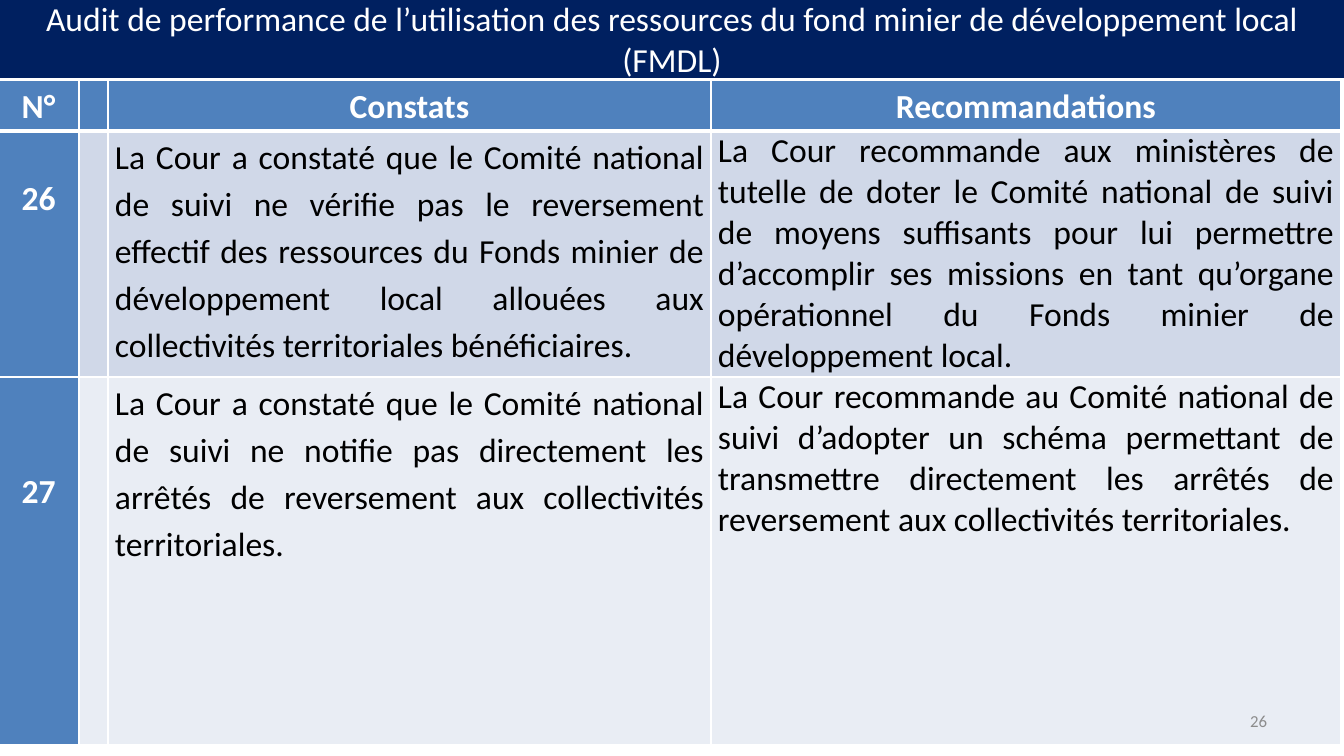
from lxml.etree import SubElement
from pptx import Presentation
from pptx.dml.color import RGBColor
from pptx.enum.shapes import MSO_SHAPE
from pptx.enum.text import MSO_ANCHOR, PP_ALIGN
from pptx.oxml.ns import qn
from pptx.util import Emu, Pt

COLORS = {
    "navy": "002060", "blue": "4F81BD", "band": "D0D8E8", "pale": "E9EDF4",
    "white": "FFFFFF", "black": "000000", "grey": "8C8C8C",
}
EMU_PER_PX = 914400 / 100.8


def px(length):
    return Emu(round(length * EMU_PER_PX))


def write(frame, text, size, color, align, bold=False, spacing=None):
    """Put one formatted run into the first paragraph of a text frame."""
    para = frame.paragraphs[0]
    para.alignment = align
    if spacing:
        para.line_spacing = spacing
    span = para.add_run()
    span.text = text
    span.font.name = "Calibri"
    span.font.size = Pt(size)
    span.font.bold = bold
    span.font.color.rgb = RGBColor.from_string(COLORS[color])


deck = Presentation()
deck.slide_width, deck.slide_height = px(1344), px(756)
page = deck.slides.add_slide(deck.slide_layouts[6])

# Title band
title = page.shapes.add_shape(MSO_SHAPE.RECTANGLE, 0, 0, px(1344), px(77))
title.shadow.inherit = False
title.fill.solid()
title.fill.fore_color.rgb = RGBColor.from_string(COLORS["navy"])
title.line.color.rgb = RGBColor.from_string(COLORS["navy"])
title.line.width = Pt(2)
title.text_frame.word_wrap = True
title.text_frame.vertical_anchor = MSO_ANCHOR.MIDDLE
write(
    title.text_frame,
    "Audit de performance de l’utilisation des ressources du fond minier "
    "de développement local (FMDL)",
    24, "white", PP_ALIGN.CENTER,
)

# Findings and recommendations
rows = [
    ("N°", "", "Constats", "Recommandations"),
    (
        "26", "",
        "La Cour a constaté que le Comité national de suivi ne vérifie pas le "
        "reversement effectif des ressources du Fonds minier de développement "
        "local allouées aux collectivités territoriales bénéficiaires.",
        "La Cour recommande aux ministères de tutelle de doter le Comité "
        "national de suivi de moyens suffisants pour lui permettre d’accomplir "
        "ses missions en tant qu’organe opérationnel du Fonds minier de "
        "développement local.",
    ),
    (
        "27", "",
        "La Cour a constaté que le Comité national de suivi ne notifie pas "
        "directement les arrêtés de reversement aux collectivités territoriales.",
        "La Cour recommande au Comité national de suivi d’adopter un schéma "
        "permettant de transmettre directement les arrêtés de reversement aux "
        "collectivités territoriales.",
    ),
]
column_widths = [81, 29, 603, 630]
row_heights = [51, 242, 368]
row_fills = ["blue", "band", "pale"]
number_offsets = [0, 41, 88]

table = page.shapes.add_table(
    len(rows), len(column_widths), px(-2), px(80),
    px(sum(column_widths)), px(sum(row_heights)),
).table
for column, width in zip(table.columns, column_widths):
    column.width = px(width)

for r, texts in enumerate(rows):
    table.rows[r].height = px(row_heights[r])
    for c, text in enumerate(texts):
        cell = table.cell(r, c)
        heading = r == 0 or c == 0
        cell.margin_left = cell.margin_right = px(7)
        cell.margin_top = px(number_offsets[r] if c == 0 else 0)
        cell.margin_bottom = 0

        # Borders come before the fill in the cell properties
        properties = cell._tc.get_or_add_tcPr()
        for side in ("lnL", "lnR", "lnT", "lnB"):
            header_edge = (r, side) in ((0, "lnB"), (1, "lnT"))
            border = SubElement(
                properties, qn(f"a:{side}"), w=str(Pt(3 if header_edge else 1))
            )
            paint = SubElement(border, qn("a:solidFill"))
            SubElement(paint, qn("a:srgbClr"), val=COLORS["white"])
        cell.fill.solid()
        fill = "blue" if c == 0 else row_fills[r]
        cell.fill.fore_color.rgb = RGBColor.from_string(COLORS[fill])

        if text:
            write(
                cell.text_frame, text, 24,
                "white" if heading else "black",
                PP_ALIGN.CENTER if heading else PP_ALIGN.JUSTIFY,
                bold=heading,
                spacing=None if c == 3 and r > 0 else 1.15,
            )

# Page number
number = page.shapes.add_textbox(px(964), px(701), px(313), px(40))
number.text_frame.word_wrap = True
number.text_frame.vertical_anchor = MSO_ANCHOR.MIDDLE
write(number.text_frame, "26", 12, "grey", PP_ALIGN.RIGHT)

deck.save("out.pptx")
